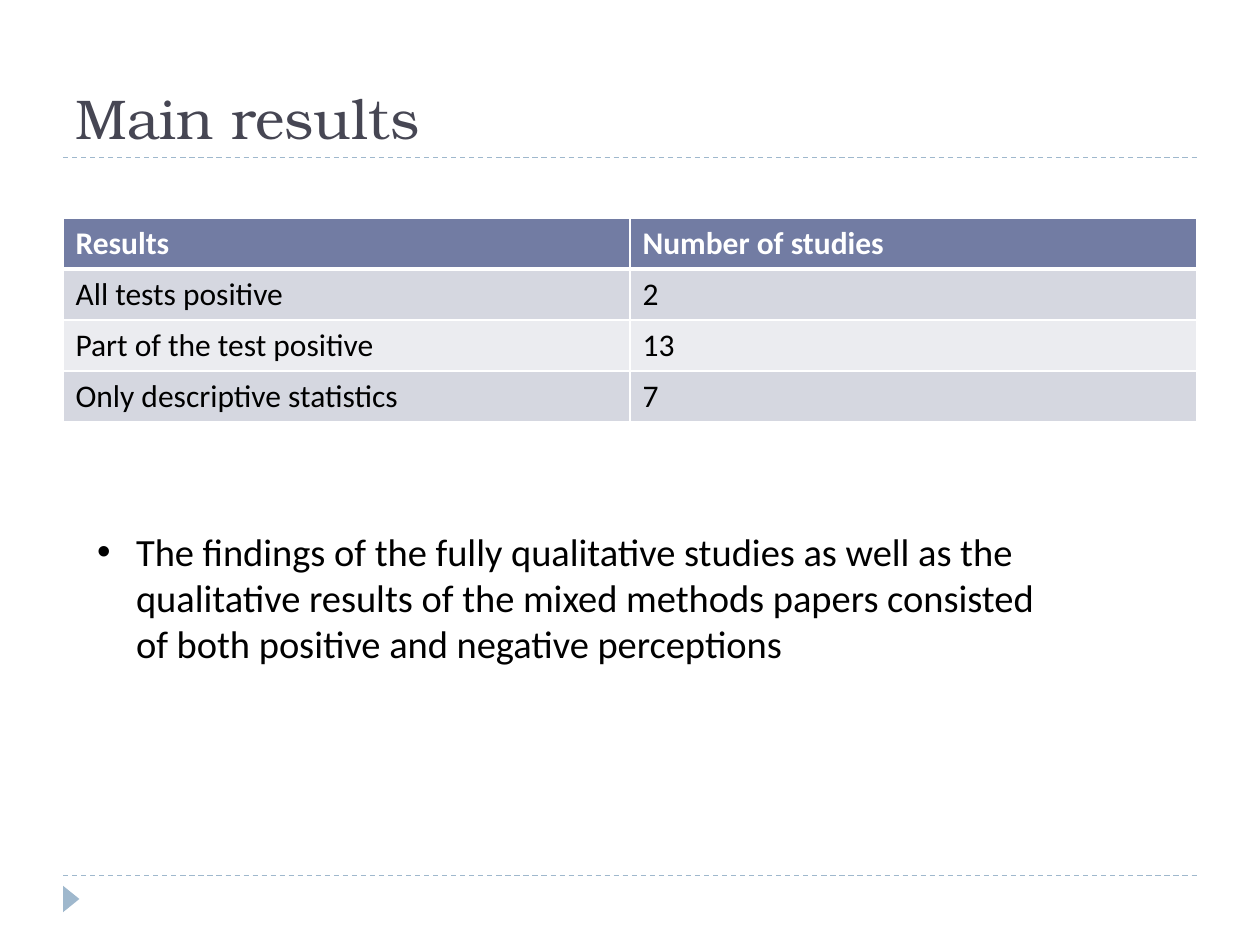
from pptx import Presentation
from pptx.dml.color import RGBColor
from pptx.enum.dml import MSO_LINE
from pptx.enum.shapes import MSO_CONNECTOR, MSO_SHAPE
from pptx.enum.text import MSO_ANCHOR, MSO_AUTO_SIZE, PP_ALIGN
from pptx.oxml.ns import qn
from pptx.util import Inches, Pt
from lxml.etree import SubElement


def paint(color_format, hex_color):
    color_format.rgb = RGBColor.from_string(hex_color)


def style_text(paragraph, size, font_name, hex_color, bold=False):
    paragraph.alignment = PP_ALIGN.LEFT
    for run in paragraph.runs:
        run.font.size = Pt(size)
        run.font.name = font_name
        run.font.bold = bold
        paint(run.font.color, hex_color)


prs = Presentation()
prs.slide_width, prs.slide_height = Inches(10), Inches(7.5)
slide = prs.slides.add_slide(prs.slide_layouts[1])
shapes = slide.shapes

# Dashed rules under the title and above the footer
for y in (6.95, 1.25):
    rule = shapes.add_connector(
        MSO_CONNECTOR.STRAIGHT, Inches(0.5), Inches(y), Inches(9.5), Inches(y))
    paint(rule.line.color, "9FB8CD")
    rule.line.width = Pt(0.75)
    rule.line.dash_style = MSO_LINE.DASH
    SubElement(rule._element.spPr, qn("a:effectLst"))

# Footer marker
marker = shapes.add_shape(
    MSO_SHAPE.ISOSCELES_TRIANGLE, Inches(0.46), Inches(7.07), Inches(0.21), Inches(0.13))
marker.rotation = 90
marker.shadow.inherit = False
marker.fill.solid()
paint(marker.fill.fore_color, "9FB8CD")
marker.line.fill.background()

# Title
title = shapes.title
title.left, title.top, title.width, title.height = map(Inches, (0.5, 0.17, 9, 1.08))
title.text_frame.text = "Main results"
title.text_frame.vertical_anchor = MSO_ANCHOR.BOTTOM
title.text_frame.auto_size = MSO_AUTO_SIZE.NONE
style_text(title.text_frame.paragraphs[0], 32, "TeX Gyre Bonum", "464653")

# Results table
results = [
    ("Results", "Number of studies"),
    ("All tests positive", "2"),
    ("Part of the test positive", "13"),
    ("Only descriptive statistics", "7"),
]
row_fills = ["727CA3", "D5D7E0", "EBECF0", "D5D7E0"]
table = shapes.add_table(
    len(results), 2, Inches(0.5), Inches(1.73), Inches(9), Inches(1.62)).table
for row, (values, row_fill) in enumerate(zip(results, row_fills)):
    header = row == 0
    for column, value in enumerate(values):
        cell = table.cell(row, column)
        cell.text_frame.text = value
        style_text(cell.text_frame.paragraphs[0], 18, "Calibri",
                   "FFFFFF" if header else "000000", bold=header)
        # The header is set off by a thicker white border
        thick_sides = {0: ("a:lnB",), 1: ("a:lnT",)}.get(row, ())
        for side in ("a:lnL", "a:lnR", "a:lnT", "a:lnB"):
            width = Pt(3 if side in thick_sides else 1)
            border = SubElement(cell._tc.get_or_add_tcPr(), qn(side), w=str(width))
            border_fill = SubElement(border, qn("a:solidFill"))
            SubElement(border_fill, qn("a:srgbClr"), val="FFFFFF")
        cell.fill.solid()
        paint(cell.fill.fore_color, row_fill)

# Bulleted finding
findings = slide.placeholders[1]
findings.left, findings.top, findings.width, findings.height = map(
    Inches, (0.67, 4.14, 7.95, 1.21))
findings.text_frame.text = (
    "The findings of the fully qualitative studies as well as the qualitative "
    "results of the mixed methods papers consisted of both positive and "
    "negative perceptions")
findings.text_frame.auto_size = MSO_AUTO_SIZE.SHAPE_TO_FIT_TEXT
finding = findings.text_frame.paragraphs[0]
finding.space_before = Pt(0)
style_text(finding, 22, "Calibri", "000000")
bullet_format = finding._p.get_or_add_pPr()
bullet_format.set("marL", str(Inches(0.31)))
bullet_format.set("indent", str(Inches(-0.31)))
SubElement(bullet_format, qn("a:buFont"), typeface="Arial")
SubElement(bullet_format, qn("a:buChar"), char="•")

prs.save("out.pptx")
